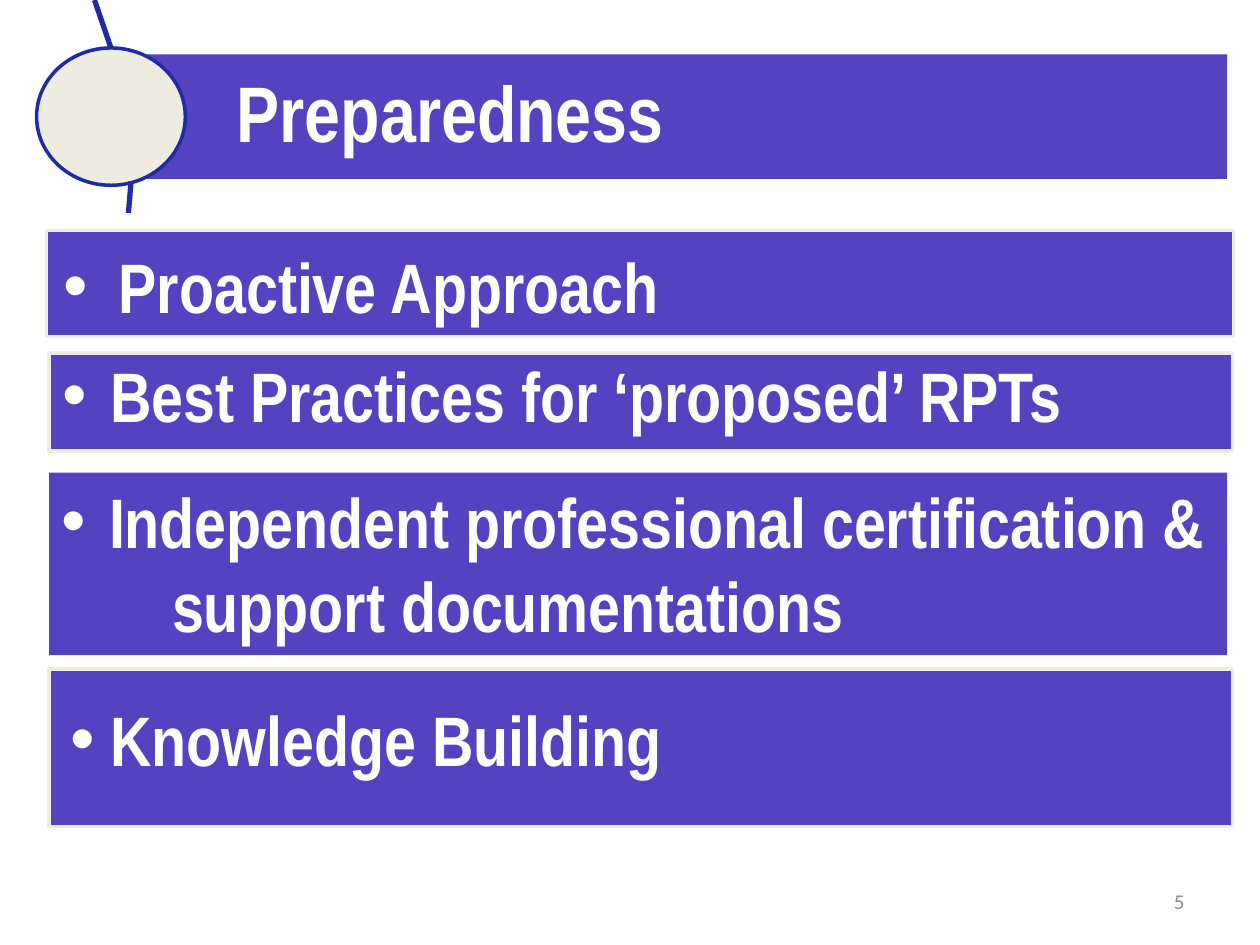
from lxml.etree import SubElement
from pptx import Presentation
from pptx.dml.color import RGBColor
from pptx.enum.shapes import MSO_CONNECTOR as CONN, MSO_SHAPE as SHAPE
from pptx.enum.text import MSO_ANCHOR as ANCHOR, MSO_AUTO_SIZE as AUTO, PP_ALIGN as ALIGN
from pptx.oxml.ns import qn
from pptx.util import Pt

COLORS = {"bar": "1B03AD", "edge": "EEECE1", "line": "1E2BA6", "text": "FFFFFF", "number": "8C8C8C"}
TITLE = ("Preparedness", (80.6, 31, 620.6, 71.3))
BARS = [(26.6, 131.8, 678.2, 60.5), (28.1, 201.6, 676.1, 56.2), (28.1, 382.3, 676.1, 90)]
ITEMS = [
    ("Proactive Approach", (29.5, 135.4, 594.7, 55.4), 31.3, 23),
    ("Best Practices for ‘proposed’ RPTs", (28.8, 198, 595.4, 55.4), 27, 27),
    ("Knowledge Building", (33.1, 394.6, 443.5, 55.4), 23, 23),
]
LIST = (["Independent professional certification &", "support documentations"], (28.1, 270, 673.2, 104.4))
CIRCLE = (20.9, 27.4, 85, 78.5)
LINES = [(54, 0, 63.4, 27.4), (74.9, 103.7, 73.4, 121.7)]
NUMBER = ("5", (516.2, 500.4, 167.8, 28.8))


def rgb(name):
    return RGBColor.from_string(COLORS[name])


def place(s, box):
    s.left, s.top, s.width, s.height = map(Pt, box)


def paint(s, fill, line=None, alpha=None):
    s.fill.solid()
    s.fill.fore_color.rgb = rgb(fill)
    if alpha:
        color = s.fill._xPr.find(qn("a:solidFill"))[0]
        SubElement(color, qn("a:alpha"), val=str(alpha * 1000))
    if line:
        s.line.color.rgb = rgb(line)
        s.line.width = Pt(2)
    else:
        s.line.fill.background()


def write(tf, text, size=40, font="Arial Narrow", color="text", bold=True, align=ALIGN.LEFT,
          anchor=ANCHOR.TOP, spacing=1, margin=0, hang=0, bullet=False, first=True):
    tf.word_wrap = True
    tf.auto_size = AUTO.NONE
    tf.vertical_anchor = anchor
    p = tf.paragraphs[0] if first else tf.add_paragraph()
    p.alignment, p.line_spacing = align, spacing
    p.space_before = p.space_after = Pt(0)
    pPr = p._p.get_or_add_pPr()
    pPr.set("marL", str(Pt(margin)))
    pPr.set("indent", str(-Pt(hang)))
    if bullet:
        SubElement(pPr, qn("a:buFont"), typeface="Arial")
        SubElement(pPr, qn("a:buChar"), char="•")
    else:
        SubElement(pPr, qn("a:buNone"))
    r = p.add_run()
    r.text = text
    r.font.size, r.font.name, r.font.bold = Pt(size), font, bold
    r.font.color.rgb = rgb(color)


prs = Presentation()
prs.slide_width, prs.slide_height = Pt(720), Pt(540)
slide = prs.slides.add_slide(prs.slide_layouts[1])
shapes = slide.shapes

title, box = TITLE
s = shapes.title
place(s, box)
paint(s, "bar", alpha=75)
s.text_frame.margin_left = Pt(54.7)
write(s.text_frame, title, size=45, anchor=ANCHOR.MIDDLE, spacing=0.9)

(first, second), box = LIST
s = slide.placeholders[1]
place(s, box)
paint(s, "bar", alpha=75)
write(s.text_frame, first, margin=27, hang=27, bullet=True)
write(s.text_frame, second, margin=63, first=False)

for box in BARS:
    s = shapes.add_shape(SHAPE.RECTANGLE, *map(Pt, box))
    s.shadow.inherit = False
    paint(s, "bar", "edge", 75)

for text, box, margin, hang in ITEMS:
    tf = shapes.add_textbox(*map(Pt, box)).text_frame
    write(tf, text, margin=margin, hang=margin, bullet=True)

s = shapes.add_shape(SHAPE.OVAL, *map(Pt, CIRCLE))
s.shadow.inherit = False
paint(s, "edge", "line")

for ends in LINES:
    s = shapes.add_connector(CONN.STRAIGHT, *map(Pt, ends))
    s.line.color.rgb = rgb("line")
    s.line.width = Pt(3)
    SubElement(s._element.spPr, qn("a:effectLst"))

text, box = NUMBER
tf = shapes.add_textbox(*map(Pt, box)).text_frame
write(tf, text, size=12, font="Calibri", color="number", bold=False,
      align=ALIGN.RIGHT, anchor=ANCHOR.MIDDLE)

prs.save("out.pptx")
